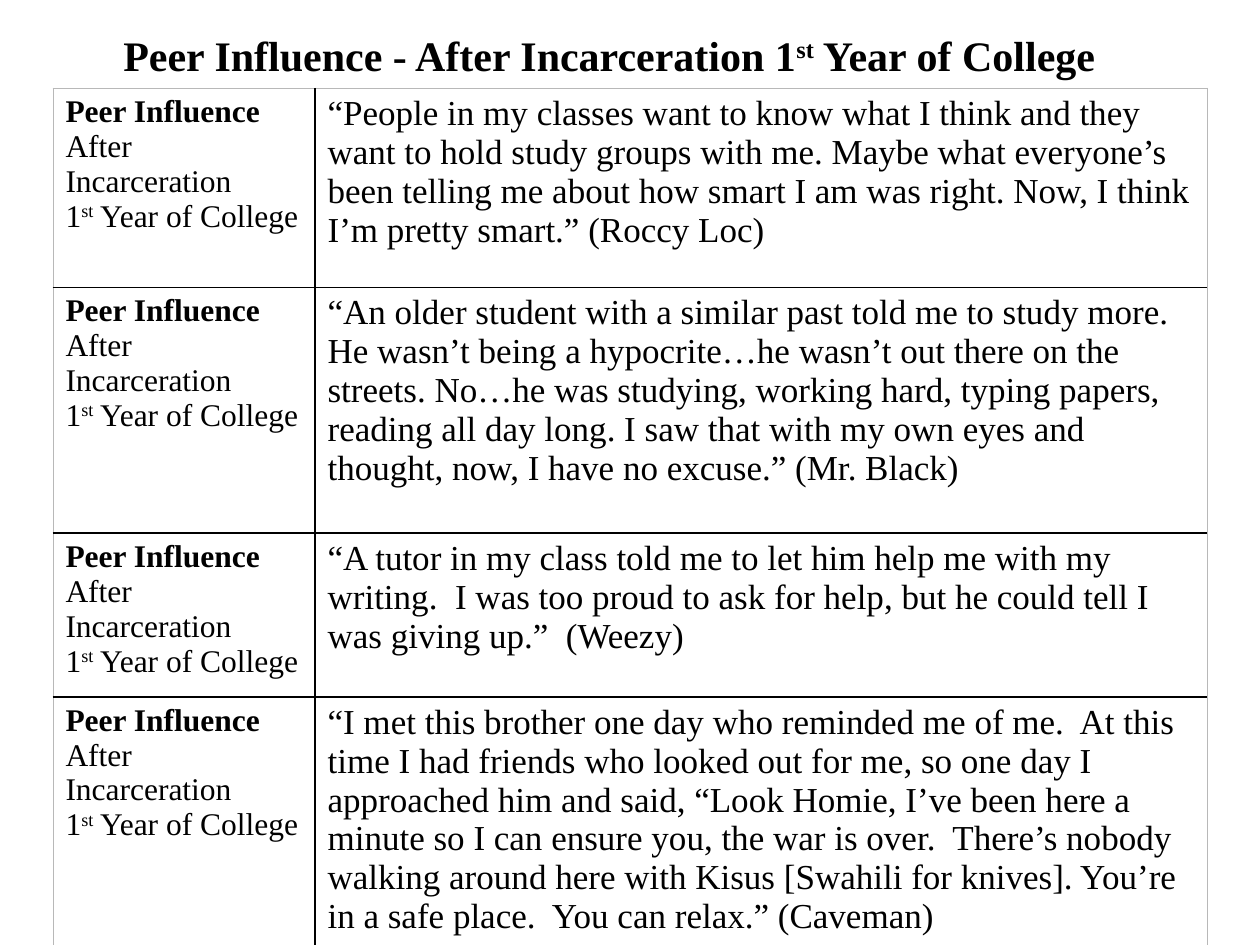
from lxml import etree
from pptx import Presentation
from pptx import util as u
from pptx.dml.color import RGBColor
from pptx.enum import text
from pptx.oxml.ns import qn

BLACK = RGBColor(0, 0, 0)
GRAY = RGBColor(0xB8, 0xB8, 0xB8)
FONT = "Times New Roman"
OUTER = (GRAY, 0.5)
ROW_RULE = (BLACK, 1)
COLUMN_RULE = (BLACK, 1.5)

COLUMN_WIDTHS = [2.08, 7.08]
QUOTES = [
    (1.58, "“People in my classes want to know what I think and they want to hold study groups with me. "
           "Maybe what everyone’s been telling me about how smart I am was right. "
           "Now, I think I’m pretty smart.” (Roccy Loc)"),
    (1.95, "“An older student with a similar past told me to study more. He wasn’t being a hypocrite…"
           "he wasn’t out there on the streets. No…he was studying, working hard, typing papers, "
           "reading all day long. I saw that with my own eyes and thought, now, I have no excuse.” "
           "(Mr. Black)"),
    (1.21, "“A tutor in my class told me to let him help me with my writing.  "
           "I was too proud to ask for help, but he could tell I was giving up.”  (Weezy)"),
    (1.96, "“I met this brother one day who reminded me of me.  At this time I had friends who looked "
           "out for me, so one day I approached him and said, “Look Homie, I’ve been here a minute so "
           "I can ensure you, the war is over.  There’s nobody walking around here with Kisus "
           "[Swahili for knives]. You’re in a safe place.  You can relax.” (Caveman)"),
]


def set_font(paragraph, size, bold=False):
    font = paragraph.font
    font.name, font.size, font.bold = FONT, u.Pt(size), bold
    font.color.rgb = BLACK


def add_first_year(paragraph):
    """Add "1st Year of College" with a raised "st"."""
    paragraph.add_run().text = "1"
    ordinal = paragraph.add_run()
    ordinal.text = "st"
    ordinal.font._element.set("baseline", "30000")
    paragraph.add_run().text = " Year of College"


def set_borders(cell, **borders):
    """Draw the L, R, T and B borders, each given as (colour, points)."""
    properties = cell._tc.get_or_add_tcPr()
    for side in "LRTB":
        color, width = borders[side]
        line = etree.SubElement(properties, qn(f"a:ln{side}"), w=str(u.Pt(width)))
        fill = etree.SubElement(line, qn("a:solidFill"))
        etree.SubElement(fill, qn("a:srgbClr"), val=str(color))


def add_title(slide, left, top, width, height):
    box = slide.shapes.add_textbox(left, top, width, height)
    frame = box.text_frame
    frame.word_wrap = True
    frame.vertical_anchor = text.MSO_ANCHOR.MIDDLE
    paragraph = frame.paragraphs[0]
    paragraph.alignment = text.PP_ALIGN.CENTER
    set_font(paragraph, 24, bold=True)
    paragraph.add_run().text = "Peer Influence - After Incarceration "
    add_first_year(paragraph)


def fill_theme_cell(cell):
    heading = cell.text_frame.paragraphs[0]
    heading.text = "Peer Influence"
    set_font(heading, 18, bold=True)
    period = cell.text_frame.add_paragraph()
    set_font(period, 18)
    period.add_run().text = "After Incarceration"
    period.add_line_break()
    add_first_year(period)


def fill_quote_cell(cell, quote):
    paragraph = cell.text_frame.paragraphs[0]
    paragraph.text = quote
    set_font(paragraph, 20)


def add_quote_table(slide, left, top, width, height):
    table = slide.shapes.add_table(len(QUOTES), 2, left, top, width, height).table
    table.first_row = table.horz_banding = False
    for column, column_width in zip(table.columns, COLUMN_WIDTHS):
        column.width = u.Inches(column_width)
    last = len(QUOTES) - 1
    for index, (row_height, quote) in enumerate(QUOTES):
        table.rows[index].height = u.Inches(row_height)
        theme_cell, quote_cell = table.rows[index].cells
        fill_theme_cell(theme_cell)
        fill_quote_cell(quote_cell, quote)
        above = OUTER if index == 0 else ROW_RULE
        below = OUTER if index == last else ROW_RULE
        set_borders(theme_cell, L=OUTER, R=COLUMN_RULE, T=above, B=below)
        set_borders(quote_cell, L=COLUMN_RULE, R=OUTER, T=above, B=below)
        for cell in (theme_cell, quote_cell):
            cell.fill.background()


def main():
    presentation = Presentation()
    presentation.slide_width, presentation.slide_height = u.Inches(10), u.Inches(7.5)
    slide = presentation.slides.add_slide(presentation.slide_layouts[6])
    add_title(slide, u.Inches(0.67), u.Inches(0.17), u.Inches(8.33), u.Inches(0.53))
    add_quote_table(slide, u.Inches(0.42), u.Inches(0.7), u.Inches(9.16), u.Inches(6.7))
    presentation.save("out.pptx")


if __name__ == "__main__":
    main()
